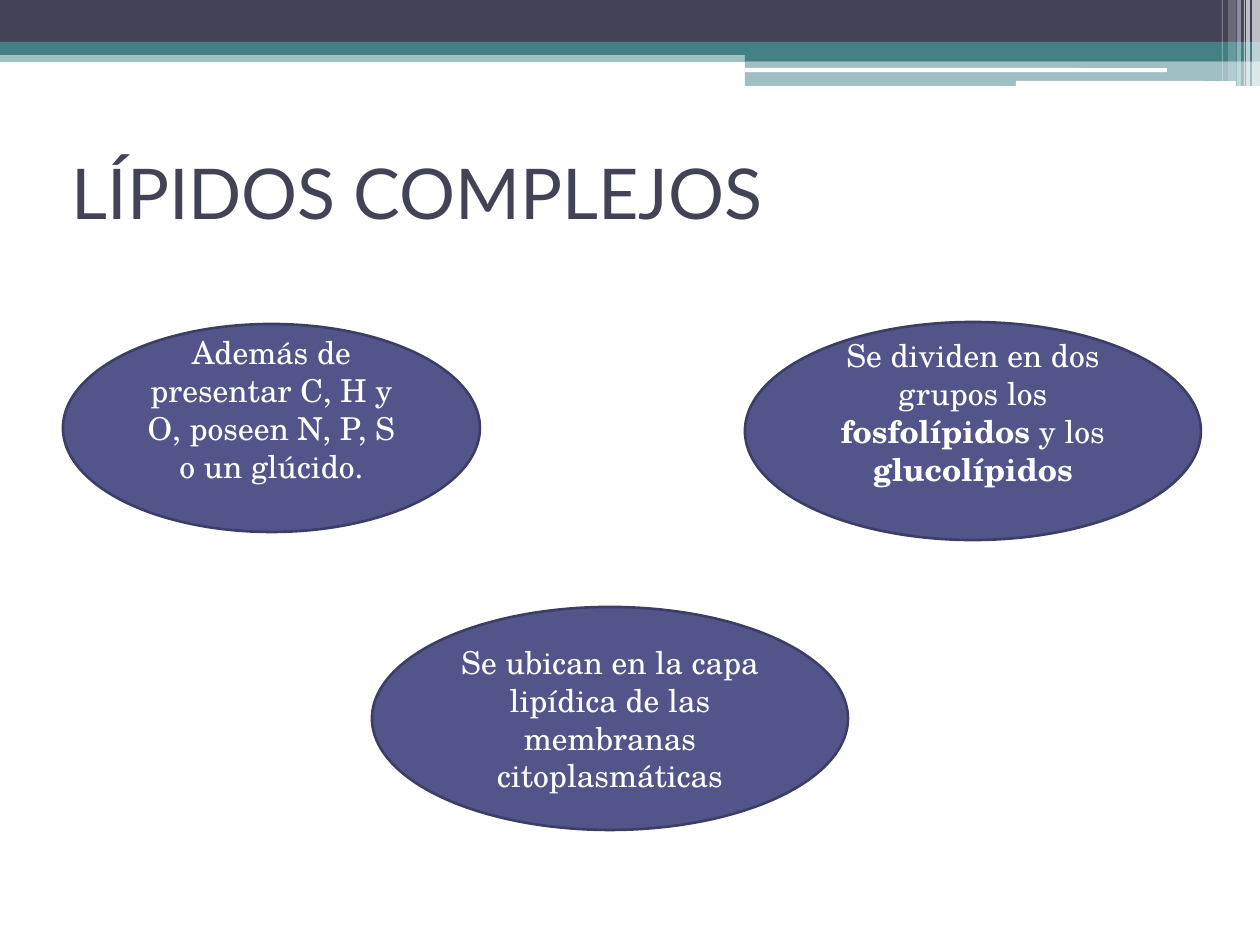
from dataclasses import dataclass

from lxml.etree import SubElement
from pptx import Presentation
from pptx.dml.color import RGBColor
from pptx.enum.shapes import MSO_SHAPE
from pptx.enum.text import MSO_ANCHOR, PP_ALIGN
from pptx.oxml.ns import qn
from pptx.util import Pt

SCALE = 914400 / 126
WIDTH, HEIGHT = 1260, 945


@dataclass(frozen=True)
class Theme:
    dark: str = "424456"
    teal: str = "438086"
    white: str = "FFFFFF"
    oval: str = "53548A"
    edge: str = "3D3E66"
    head_font: str = "Lato"
    body_font: str = "TeX Gyre Schola"
    head_size: int = 40
    body_size: int = 18


THEME = Theme()


def emu(px):
    return round(px * SCALE)


def place(shape, box):
    shape.left, shape.top, shape.width, shape.height = map(emu, box)


def add_shape(slide, kind, box, color, alpha=100):
    """Add a filled shape without line or shadow; alpha is opacity in percent."""
    shape = slide.shapes.add_shape(kind, *map(emu, box))
    shape.shadow.inherit = False
    shape.fill.solid()
    shape.fill.fore_color.rgb = RGBColor.from_string(color)
    shape.line.fill.background()
    if alpha < 100:
        tint = shape.fill._xPr.find(f".//{qn('a:srgbClr')}")
        SubElement(tint, qn("a:alpha"), val=str(alpha * 1000))
    return shape


def write(shape, runs, font, size, color, align=PP_ALIGN.LEFT):
    """Fill one paragraph from (text, bold) runs."""
    frame = shape.text_frame
    frame.word_wrap = True
    frame.vertical_anchor = MSO_ANCHOR.MIDDLE
    para = frame.paragraphs[0]
    para.alignment = align
    for text, bold in runs:
        run = para.add_run()
        run.text = text
        run.font.name = font
        run.font.size = Pt(size)
        run.font.bold = bold
        run.font.color.rgb = RGBColor.from_string(color)


def add_header(slide, box):
    left, top, width, height = box
    right = left + width
    half = 745  # start of the right-hand bands
    bands = [
        (0, 50, 12, THEME.teal, 50),
        (0, 0, 43, THEME.dark, 100),
        (0, 42, 13, THEME.teal, 100),
        (half, 49, 12, THEME.teal, 100),
        (half, 61, 25, THEME.teal, 50),
    ]
    for x, y, h, color, alpha in bands:
        add_shape(slide, MSO_SHAPE.RECTANGLE,
                  (left + x, top + y, width - x, h), color, alpha)

    for x, y, w, h in [(half, 68, 422, 4), (1016, 81, 220, 5)]:
        add_shape(slide, MSO_SHAPE.ROUNDED_RECTANGLE,
                  (left + x, top + y, w, h), THEME.white)

    # Stripes: distance from the right edge, width, height, opacity
    stripes = [(8, 8, height, 65), (14, 4, height, 65), (16, 1, height, 60),
               (23, 4, height, 40), (32, 8, height - 5, 20),
               (38, 1, height - 5, 30)]
    for gap, w, h, alpha in stripes:
        add_shape(slide, MSO_SHAPE.RECTANGLE,
                  (right - gap, top, w, h), THEME.white, alpha)


def add_title(slide, box, text):
    title = slide.shapes.title
    place(title, box)
    write(title, [(text, False)], font=THEME.head_font,
          size=THEME.head_size, color=THEME.dark)


def add_oval(slide, box, runs, lift=0):
    """Add an oval whose text sits higher by half of lift."""
    oval = add_shape(slide, MSO_SHAPE.OVAL, box, THEME.oval)
    oval.line.color.rgb = RGBColor.from_string(THEME.edge)
    oval.line.width = Pt(1.5)
    oval.text_frame.margin_bottom = emu(6 + lift)
    write(oval, runs, font=THEME.body_font, size=THEME.body_size,
          color=THEME.white, align=PP_ALIGN.CENTER)


def main():
    deck = Presentation()
    deck.slide_width, deck.slide_height = emu(WIDTH), emu(HEIGHT)
    slide = deck.slides.add_slide(deck.slide_layouts[5])

    add_header(slide, (0, 0, WIDTH, 86))
    add_title(slide, (59, 118, 1134, 147), "LÍPIDOS COMPLEJOS")
    add_oval(slide, (63, 324, 417, 208), [
        ("Además de presentar C, H y O, poseen N, P, S o un glúcido.", False),
    ], lift=38)
    add_oval(slide, (372, 607, 476, 223), [
        ("Se ubican en la capa lipídica de las membranas citoplasmáticas",
         False),
    ])
    add_oval(slide, (745, 322, 456, 218), [
        ("Se dividen en dos grupos los ", False),
        ("fosfolípidos", True),
        (" y los ", False),
        ("glucolípidos", True),
    ], lift=38)

    deck.save("out.pptx")


if __name__ == "__main__":
    main()
